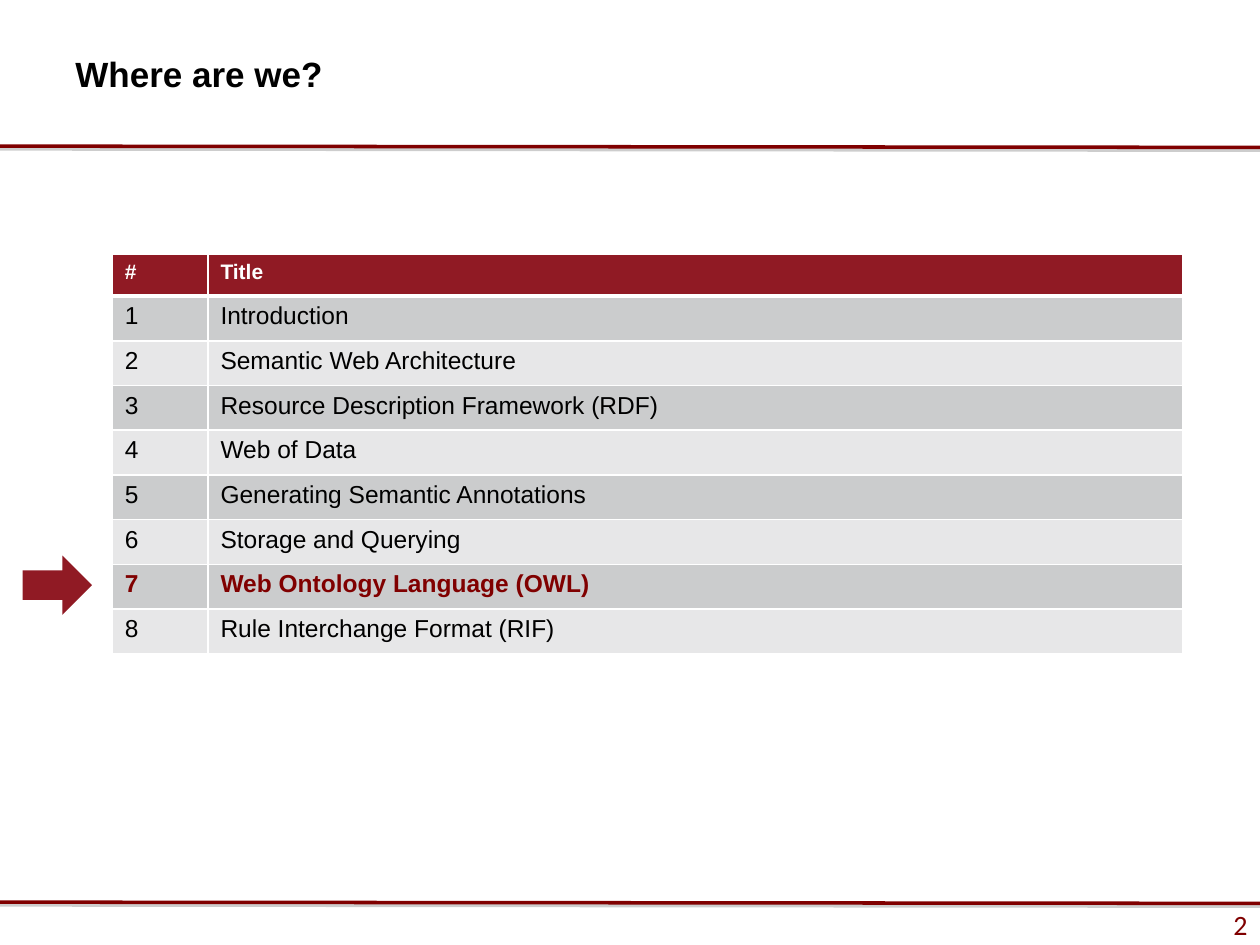
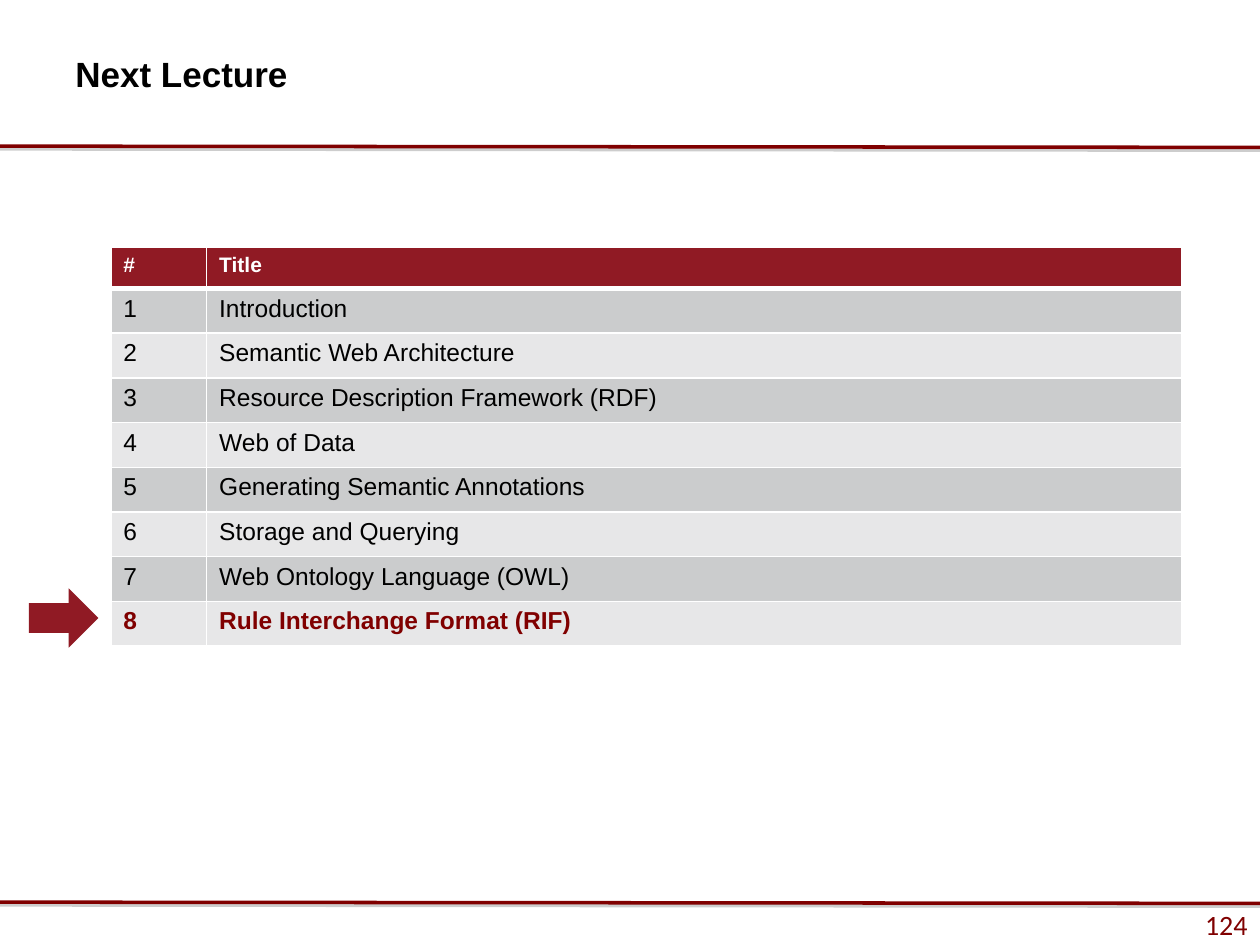
from lxml import etree
from pptx import Presentation
from pptx.dml.color import RGBColor
from pptx.enum.shapes import MSO_CONNECTOR, MSO_SHAPE
from pptx.enum.text import MSO_ANCHOR, PP_ALIGN
from pptx.oxml import parse_xml
from pptx.oxml.ns import nsdecls, qn
from pptx.util import Inches, Pt

MAROON = RGBColor(0x80, 0x00, 0x00)
CRIMSON = RGBColor(0x90, 0x1A, 0x24)
DARK_BAND = RGBColor(0xCB, 0xCC, 0xCD)
LIGHT_BAND = RGBColor(0xE7, 0xE7, 0xE8)
BLACK = RGBColor(0x00, 0x00, 0x00)
WHITE = RGBColor(0xFF, 0xFF, 0xFF)
SHADOW = RGBColor(0x80, 0x80, 0x80)

SLIDE_W, SLIDE_H = 10, 7.5
TITLE_BOX = (0.5, 0.33, 6.33, 0.5)
FOOTER_BOX = (0, 7.21, SLIDE_W, 0.25)
RULE_TOPS = (1.16, 7.16)
TABLE_W, TABLE_H = 8.5, 3.17
NUMBER_W, HEADER_H = 0.76, 0.33
ARROW_W, ARROW_H = 0.55, 0.47

LECTURES = [
    "Introduction",
    "Semantic Web Architecture",
    "Resource Description Framework (RDF)",
    "Web of Data",
    "Generating Semantic Annotations",
    "Storage and Querying",
    "Web Ontology Language (OWL)",
    "Rule Interchange Format (RIF)",
]


def inches(box):
    return [Inches(v) for v in box]


def style_text(p, size, color, bold=False, name="Arial"):
    for r in p.runs:
        r.font.name = name
        r.font.size = Pt(size)
        r.font.bold = bold
        r.font.color.rgb = color


def add_solid(s, kind, box, color):
    sp = s.shapes.add_shape(kind, *inches(box))
    sp.shadow.inherit = False
    sp.fill.solid()
    sp.fill.fore_color.rgb = color
    sp.line.fill.background()
    return sp


def add_footer(s, box, number):
    tf = add_solid(s, MSO_SHAPE.RECTANGLE, box, WHITE).text_frame
    tf.word_wrap = False
    tf.vertical_anchor = MSO_ANCHOR.MIDDLE
    p = tf.paragraphs[0]
    p.text = str(number)
    p.alignment = PP_ALIGN.RIGHT
    style_text(p, 16, MAROON, name="Calibri")


def add_rule(s, top):
    rule = s.shapes.add_connector(
        MSO_CONNECTOR.STRAIGHT, *inches((0, top, SLIDE_W, top + 0.01)))
    rule.line.color.rgb = MAROON
    rule.line.width = Pt(2)
    rule._element.spPr.append(parse_xml(
        f'<a:effectLst {nsdecls("a")}>'
        f'<a:outerShdw blurRad="0" dist="{Pt(1.6)}" dir="5400000" rotWithShape="0">'
        f'<a:srgbClr val="{SHADOW}"><a:alpha val="38000"/></a:srgbClr>'
        '</a:outerShdw></a:effectLst>'))


def add_title(s, box, text):
    tf = s.shapes.add_textbox(*inches(box)).text_frame
    tf.word_wrap = True
    tf.vertical_anchor = MSO_ANCHOR.MIDDLE
    p = tf.paragraphs[0]
    p.text = text
    style_text(p, 20, BLACK, bold=True)


def set_borders(cell, top, bottom):
    tcPr = cell._tc.get_or_add_tcPr()
    for side, width in (("L", 1), ("R", 1), ("T", top), ("B", bottom)):
        ln = etree.SubElement(tcPr, qn(f"a:ln{side}"), w=str(Pt(width)))
        fill = etree.SubElement(ln, qn("a:solidFill"))
        etree.SubElement(fill, qn("a:srgbClr"), val=str(WHITE))


def add_lecture_table(s, box, current):
    rows = [("#", "Title")]
    rows += [(str(n), name) for n, name in enumerate(LECTURES, 1)]
    width, height = box[2:]
    table = s.shapes.add_table(len(rows), 2, *inches(box)).table
    table.columns[0].width = Inches(NUMBER_W)
    table.columns[1].width = Inches(width - NUMBER_W)
    row_h = (height - HEADER_H) / len(LECTURES)
    for i, row in enumerate(rows):
        table.rows[i].height = Inches(row_h if i else HEADER_H)
        if i == 0:
            band, size, color = CRIMSON, 12, WHITE
        else:
            band, size = (DARK_BAND if i % 2 else LIGHT_BAND), 14
            color = MAROON if i == current else BLACK
        for j, text in enumerate(row):
            cell = table.cell(i, j)
            set_borders(cell, 3 if i == 1 else 1, 3 if i == 0 else 1)
            cell.fill.solid()
            cell.fill.fore_color.rgb = band
            p = cell.text_frame.paragraphs[0]
            p.text = text
            style_text(p, size, color, bold=i in (0, current))


def add_agenda_slide(prs, title, number, current, table_at, arrow_at):
    s = prs.slides.add_slide(prs.slide_layouts[6])
    add_footer(s, FOOTER_BOX, number)
    for top in RULE_TOPS:
        add_rule(s, top)
    add_title(s, TITLE_BOX, title)
    add_lecture_table(s, (*table_at, TABLE_W, TABLE_H), current)
    add_solid(s, MSO_SHAPE.RIGHT_ARROW, (*arrow_at, ARROW_W, ARROW_H), CRIMSON)


def main():
    prs = Presentation()
    prs.slide_width, prs.slide_height = Inches(SLIDE_W), Inches(SLIDE_H)
    add_agenda_slide(prs, "Where are we?", 2, 7, (0.89, 2.02), (0.18, 4.41))
    add_agenda_slide(prs, "Next Lecture", 124, 8, (0.88, 1.96), (0.23, 4.67))
    prs.save("out.pptx")


if __name__ == "__main__":
    main()
